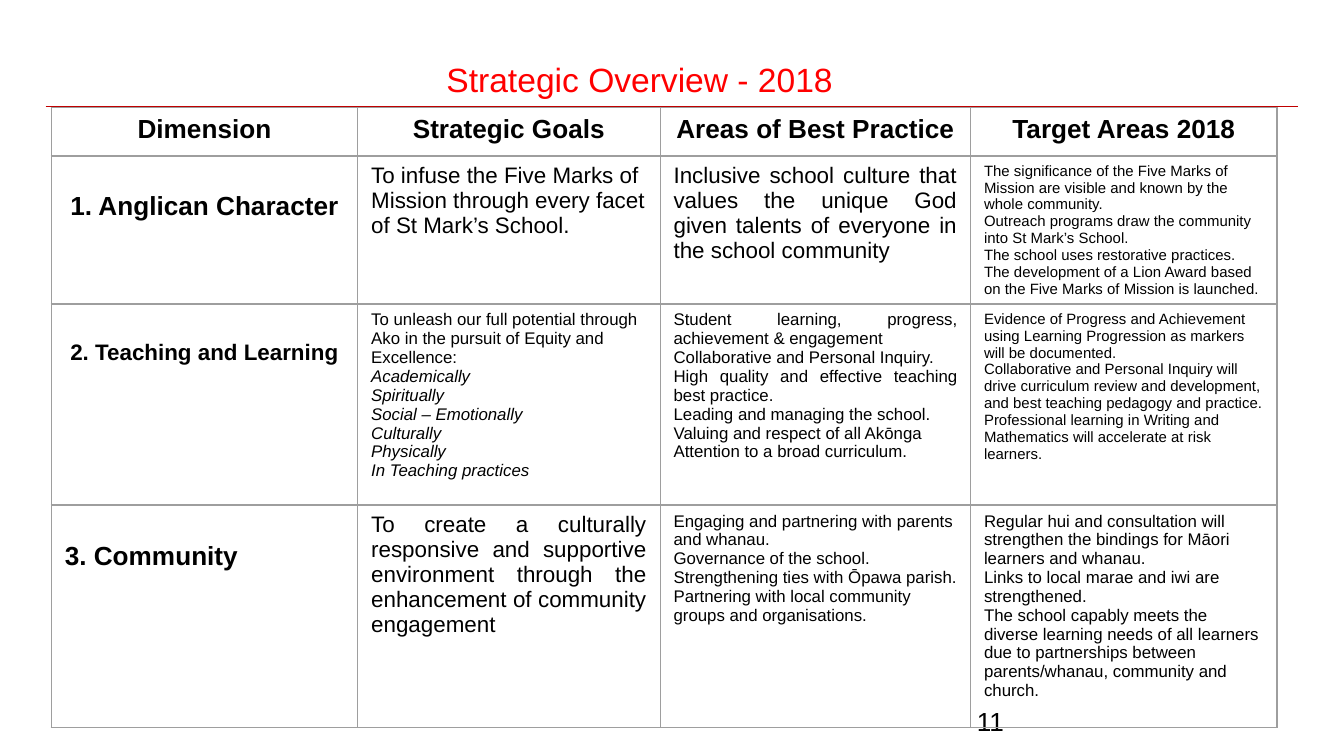
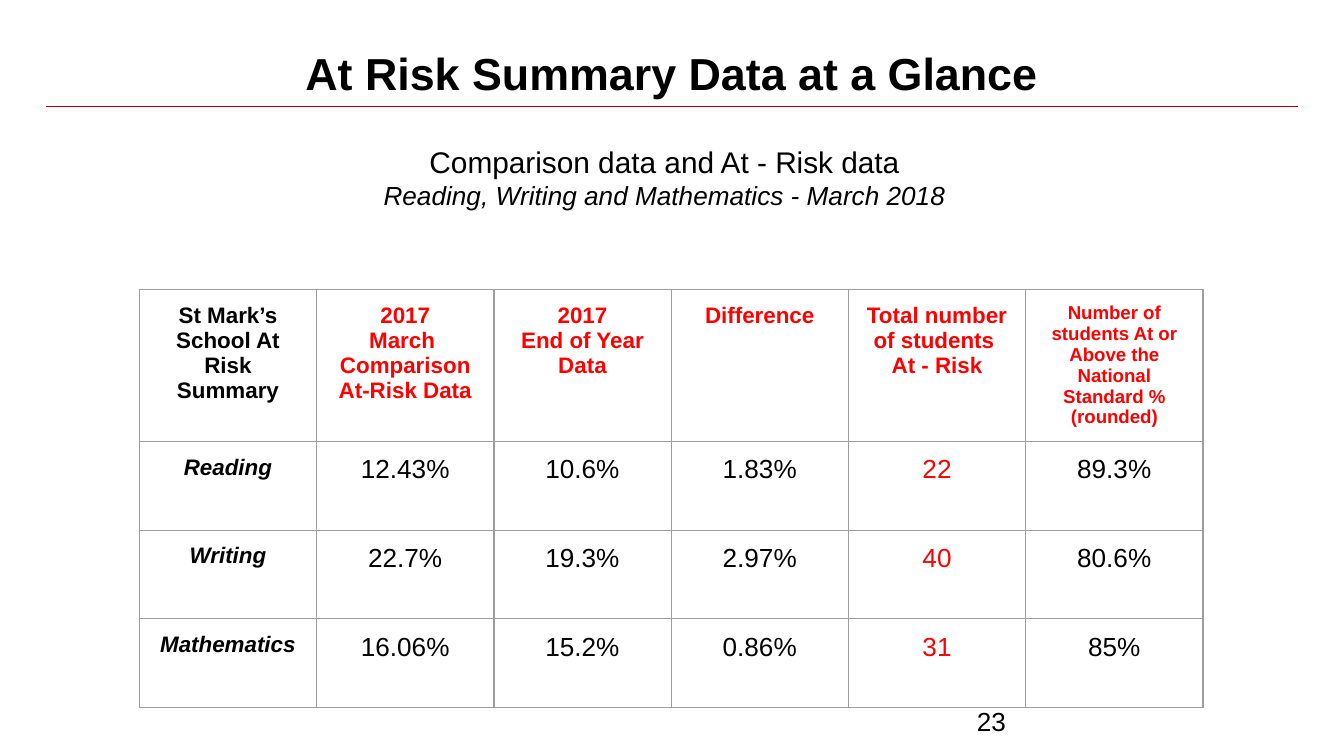
from lxml import etree
from pptx import Presentation, util as u
from pptx.dml.color import RGBColor
from pptx.enum import shapes, text
from pptx.oxml import ns

WIDE, HIGH = u.Pt(720), u.Pt(405)
FONT, BLACK, RED, RULE, GREY = "Arial", "000000", "FF0000", "C00000", "9E9E9E"
ALIGN = {
    "l": text.PP_ALIGN.LEFT,
    "c": text.PP_ALIGN.CENTER,
    "j": text.PP_ALIGN.JUSTIFY,
}


def rgb(code):
    return RGBColor.from_string(code)


def across(share):
    return int(WIDE * share / 100)


def down(share):
    return int(HIGH * share / 100)


def area(left, top, width, height):
    return across(left), down(top), across(width), down(height)


def put(frame, words, size=14, color=BLACK, bold=False, italic=False, align="l"):
    for line in words.split("\n"):
        last = frame.paragraphs[-1]
        para = frame.add_paragraph() if last.runs else last
        para.alignment = ALIGN[align]
        run = para.add_run()
        run.text = line
        font = run.font
        font.name, font.size = FONT, u.Pt(size)
        font.bold, font.italic = bold, italic
        font.color.rgb = rgb(color)


def setup(frame, pad, anchor=text.MSO_ANCHOR.TOP):
    frame.word_wrap = True
    frame.auto_size = text.MSO_AUTO_SIZE.NONE
    frame.vertical_anchor = anchor
    frame.margin_left = frame.margin_right = u.Inches(0.1)
    frame.margin_top = frame.margin_bottom = u.Inches(pad)


def label(slide, spot, pad, anchor=text.MSO_ANCHOR.TOP):
    frame = slide.shapes.add_textbox(*area(*spot)).text_frame
    setup(frame, pad, anchor)
    return frame


def page(deck, title, spot, pad, number, **style):
    slide = deck.slides.add_slide(deck.slide_layouts[5])
    head = slide.shapes.title
    head.left, head.top, head.width, head.height = area(*spot)
    setup(head.text_frame, pad)
    put(head.text_frame, title, align="c", **style)
    level = down(14.07)
    rule = slide.shapes.add_connector(
        shapes.MSO_CONNECTOR.STRAIGHT, across(3.4), level, across(96.6), level)
    rule.line.color.rgb = rgb(RULE)
    rule.line.width = u.Pt(0.75)
    etree.SubElement(rule._element.spPr, ns.qn("a:effectLst"))
    put(label(slide, (71.7, 92.7, 23.3, 5.34), 0.05, text.MSO_ANCHOR.MIDDLE), number)
    return slide


def edge(cell):
    props = cell._tc.get_or_add_tcPr()
    for side in ("lnL", "lnR", "lnT", "lnB"):
        line = etree.SubElement(props, ns.qn("a:" + side), w=str(u.Pt(0.75)))
        fill = etree.SubElement(line, ns.qn("a:solidFill"))
        etree.SubElement(fill, ns.qn("a:srgbClr"), val=GREY)


def bit(words, size=14, **style):
    return words, dict(style, size=size)


def grid(slide, left, top, cols, rows, cells, pad, drop=0):
    spot = area(left, top, sum(cols), sum(rows))
    table = slide.shapes.add_table(len(rows), len(cols), *spot).table
    table.first_row = table.horz_banding = False
    for col, share in zip(table.columns, cols):
        col.width = across(share)
    for r, (row, share) in enumerate(zip(table.rows, rows)):
        row.height = down(share)
        for c, bits in enumerate(cells[r]):
            cell = table.cell(r, c)
            edge(cell)
            cell.fill.background()
            cell.margin_left = cell.margin_right = u.Inches(0.1)
            cell.margin_top = u.Inches(pad + (drop if r and not c else 0))
            cell.margin_bottom = u.Inches(pad)
            for words, style in bits if isinstance(bits, list) else [bits]:
                put(cell.text_frame, words, **style)


def plan(deck):
    slide = page(deck, "Strategic Overview - 2018", (17.1, 6.96, 61, 7.1),
                 0.05, "11", size=18, color=RED)
    heads = ("Dimension", "Strategic Goals", "Areas of Best Practice",
             "Target Areas 2018")
    cells = [
        [bit(head, bold=True, align="c") for head in heads],
        [
            bit("1. Anglican Character", bold=True, align="c"),
            bit("To infuse the Five Marks of Mission through every facet of "
                "St Mark’s School.", 12),
            bit("Inclusive school culture that values the unique God given "
                "talents of everyone in the school community", 12, align="j"),
            bit("The significance of the Five Marks of Mission are visible and "
                "known by the whole community.\n"
                "Outreach programs draw the community into St Mark’s School.\n"
                "The school uses restorative practices.\n"
                "The development of a Lion Award based on the Five Marks of "
                "Mission is launched.", 8),
        ],
        [
            bit("2. Teaching and Learning", 12, bold=True, align="c"),
            [
                bit("To unleash our full potential through Ako in the pursuit "
                    "of Equity and Excellence:", 9),
                bit("Academically\nSpiritually\nSocial – Emotionally\n"
                    "Culturally\nPhysically\nIn Teaching practices",
                    9, italic=True),
            ],
            bit("Student learning, progress, achievement & engagement\n"
                "Collaborative and Personal Inquiry.\n"
                "High quality and effective teaching best practice.\n"
                "Leading and managing the school.\n"
                "Valuing and respect of all Akōnga\n"
                "Attention to a broad curriculum.", 9, align="j"),
            bit("Evidence of Progress and Achievement using Learning "
                "Progression as markers will be documented.\n"
                "Collaborative and Personal Inquiry will drive curriculum "
                "review and development, and best teaching pedagogy and "
                "practice.\n"
                "Professional learning in Writing and Mathematics will "
                "accelerate at risk learners.", 8),
        ],
        [
            bit("3. Community", bold=True, align="j"),
            bit("To create a culturally responsive and supportive environment "
                "through the enhancement of community engagement",
                12, align="j"),
            bit("Engaging and partnering with parents and whanau.\n"
                "Governance of the school.\n"
                "Strengthening ties with Ōpawa parish.\n"
                "Partnering with local community groups and organisations.", 9),
            bit("Regular hui and consultation will strengthen the bindings for "
                "Māori learners and whanau.\n"
                "Links to local marae and iwi are strengthened.\n"
                "The school capably meets the diverse learning needs of all "
                "learners due to partnerships between parents/whanau, "
                "community and church.", 9),
        ],
    ]
    grid(slide, 3.82, 14.23, (22.8, 22.5, 23.1, 22.8),
         (6.4, 18.5, 26.6, 29.4), cells, 0.05, drop=0.22)


def risk(deck):
    slide = page(deck, "At Risk Summary Data at a Glance",
                 (3.4, 4.27, 93.1, 9.25), 0.1, "23", size=24, bold=True)
    note = label(slide, (6.5, 17.26, 85.9, 13.52), 0.1)
    put(note, "Comparison data and At - Risk data", size=16, align="c")
    put(note, "Reading, Writing and Mathematics - March 2018",
        italic=True, align="c")
    heads = (
        ("St Mark’s School At Risk Summary", 12, BLACK),
        ("2017\nMarch \nComparison At-Risk Data", 12, RED),
        ("2017\nEnd of Year Data", 12, RED),
        ("Difference", 12, RED),
        ("Total number of students \nAt - Risk", 12, RED),
        ("Number of students At or Above the National Standard % (rounded)",
         10, RED),
    )
    data = (
        ("Reading", "12.43%", "10.6%", "1.83%", "22", "89.3%"),
        ("Writing", "22.7%", "19.3%", "2.97%", "40", "80.6%"),
        ("Mathematics", "16.06%", "15.2%", "0.86%", "31", "85%"),
    )
    cells = [[bit(words, size, color=color, bold=True, align="c")
              for words, size, color in heads]]
    for name, *marks in data:
        row = [bit(name, 12, bold=True, italic=True, align="c")]
        row += [bit(mark, color=RED if c == 3 else BLACK, align="c")
                for c, mark in enumerate(marks)]
        cells.append(row)
    grid(slide, 10.37, 38.28, [13.19] * 6, [11.74] * 4, cells, 0.1)


def main():
    deck = Presentation()
    deck.slide_width, deck.slide_height = WIDE, HIGH
    plan(deck)
    risk(deck)
    deck.save("out.pptx")


if __name__ == "__main__":
    main()
